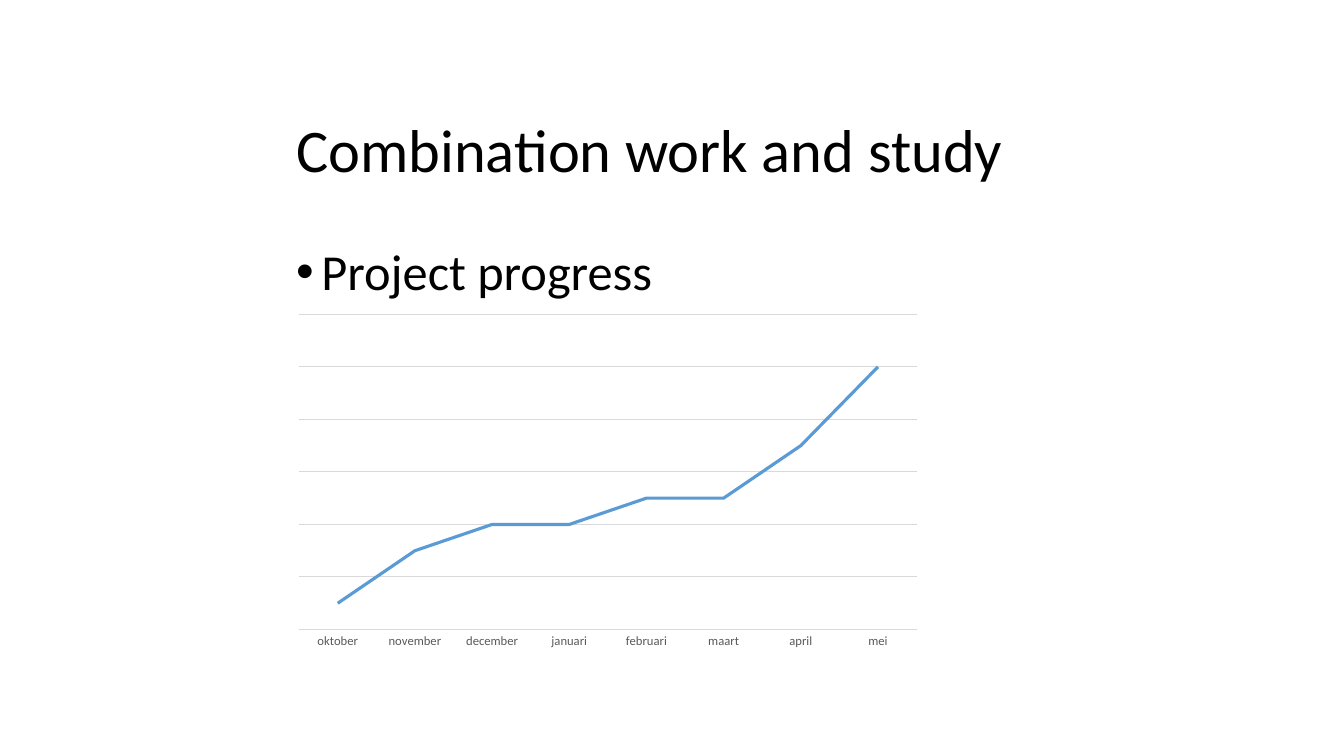
from lxml import etree
from pptx import Presentation
from pptx.chart import data as cd
from pptx.dml.color import RGBColor
from pptx.enum import chart as ec, text
from pptx.oxml import ns
from pptx.util import Pt

BLACK = RGBColor(0, 0, 0)
GREY = RGBColor(0x59, 0x59, 0x59)
LIGHT = RGBColor(0xD9, 0xD9, 0xD9)
BLUE = RGBColor(0x5B, 0x9B, 0xD5)
FONT = "Calibri"
LEFT = 204.5

TITLE = "Combination work and study"
BULLET = "Project progress"
PROGRESS = {
    "oktober": 10, "november": 30, "december": 40, "januari": 40,
    "februari": 50, "maart": 50, "april": 70, "mei": 100,
}


def set_font(font, size, color):
    font.name = FONT
    font.size = Pt(size)
    font.color.rgb = color


def set_line(line, width, color):
    line.width = Pt(width)
    line.color.rgb = color


def add_text(slide, words, top, width, height, size, anchor):
    tf = slide.shapes.add_textbox(Pt(LEFT), Pt(top), Pt(width), Pt(height)).text_frame
    tf.word_wrap = True
    tf.vertical_anchor = anchor
    p = tf.paragraphs[0]
    p.text = words
    p.line_spacing = 0.9
    set_font(p.runs[0].font, size, BLACK)
    return p


def add_bullet(p, indent):
    p.space_before = Pt(10)
    pPr = p._p.get_or_add_pPr()
    pPr.set("marL", str(Pt(indent)))
    pPr.set("indent", str(-Pt(indent)))
    etree.SubElement(pPr, ns.qn("a:buFont"), typeface="Arial")
    etree.SubElement(pPr, ns.qn("a:buChar"), char="•")


def add_progress_chart(slide):
    data = cd.CategoryChartData()
    data.categories = list(PROGRESS)
    data.add_series("Series 1", list(PROGRESS.values()))
    chart = slide.shapes.add_chart(
        ec.XL_CHART_TYPE.LINE_STACKED, Pt(LEFT), Pt(219.6), Pt(459.4), Pt(248.4), data
    ).chart
    chart.has_legend = False
    chart.has_title = False
    set_font(chart.font, 10, BLACK)

    months = chart.category_axis
    months.major_tick_mark = ec.XL_TICK_MARK.NONE
    set_font(months.tick_labels.font, 9, GREY)
    set_line(months.format.line, 0.75, LIGHT)

    values = chart.value_axis
    values.visible = False
    values.minimum_scale = 0
    values.maximum_scale = 120
    values.major_unit = 20
    values.has_major_gridlines = True
    set_line(values.major_gridlines.format.line, 0.75, LIGHT)

    plot = chart.plots[0]
    plot.vary_by_categories = False
    series = plot.series[0]
    series.smooth = False
    series.marker.style = ec.XL_MARKER_STYLE.NONE
    set_line(series.format.line, 2.25, BLUE)


def main():
    prs = Presentation()
    prs.slide_width, prs.slide_height = Pt(960), Pt(540)
    slide = prs.slides.add_slide(prs.slide_layouts[6])
    add_text(slide, TITLE, 57.6, 532, 103.7, 43.2, text.MSO_ANCHOR.MIDDLE)
    p = add_text(slide, BULLET, 172.8, 434.2, 318.2, 36, text.MSO_ANCHOR.TOP)
    add_bullet(p, 18)
    add_progress_chart(slide)
    prs.save("out.pptx")


if __name__ == "__main__":
    main()
